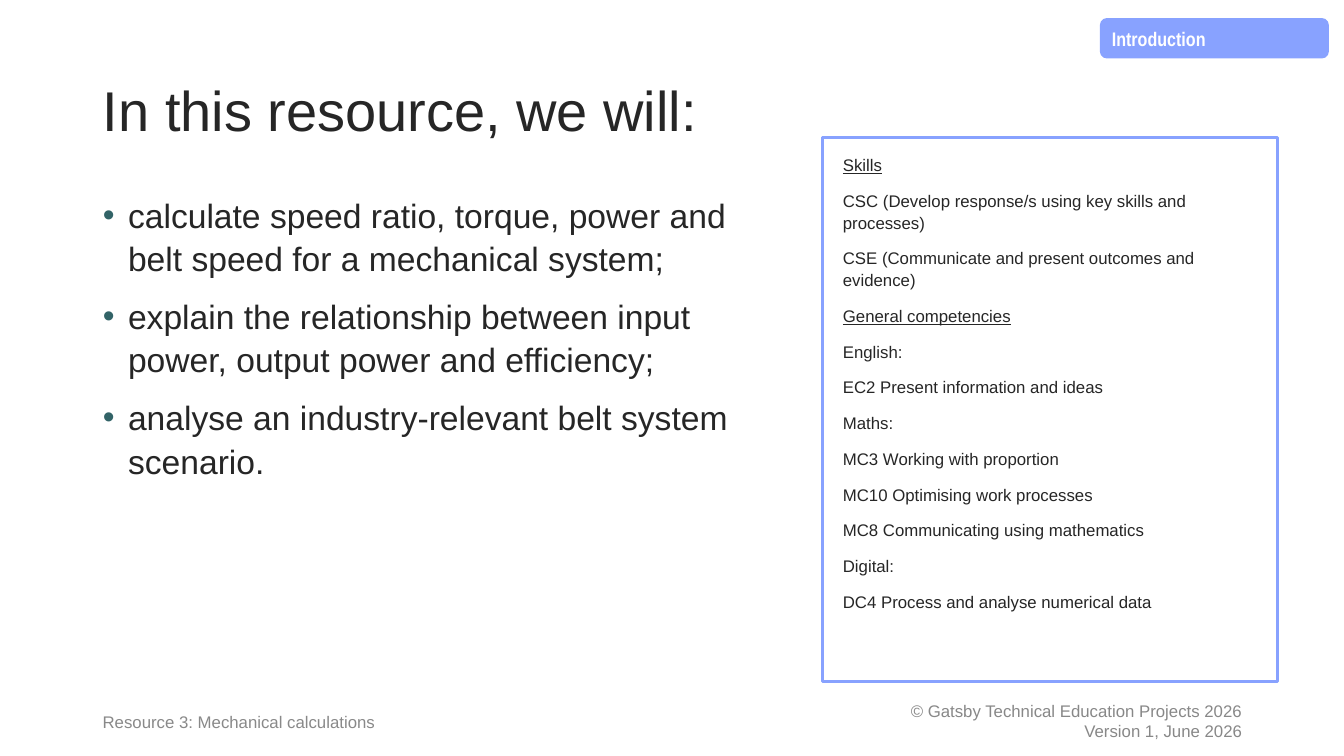
from lxml.etree import SubElement
from pptx import Presentation
from pptx.dml.color import RGBColor
from pptx.enum.shapes import MSO_SHAPE
from pptx.enum.text import MSO_ANCHOR, MSO_AUTO_SIZE, PP_ALIGN
from pptx.oxml.ns import qn
from pptx.util import Inches, Pt

INK, BLUE, TEAL, WHITE = "262626", "88A2FF", "326367", "FFFFFF"

GOALS = [
    "calculate speed ratio, torque, power and belt speed for a mechanical system;",
    "explain the relationship between input power, output power and efficiency;",
    "analyse an industry-relevant belt system scenario.",
]
HEADS = ["Skills", "General competencies"]
SKILLS = [
    HEADS[0],
    "CSC (Develop response/s using key skills and processes)",
    "CSE (Communicate and present outcomes and evidence)",
    HEADS[1],
    "English:",
    "EC2 Present information and ideas",
    "Maths:",
    "MC3 Working with proportion",
    "MC10 Optimising work processes",
    "MC8 Communicating using mathematics",
    "Digital:",
    "DC4 Process and analyse numerical data",
]


def color(hex):
    return RGBColor.from_string(hex)


def place(shape, box):
    for name, value in zip(("left", "top", "width", "height"), box):
        setattr(shape, name, Inches(value))


def paint(shape, fill, line=None):
    shape.fill.solid()
    shape.fill.fore_color.rgb = color(fill)
    if line:
        shape.line.color.rgb = color(line)
        shape.line.width = Pt(2.25)
    else:
        shape.line.fill.background()


def mark(para, bullet):
    """Give the paragraph a hanging teal bullet, or none."""
    props = para._p.get_or_add_pPr()
    hang = Inches(0.25) if bullet else 0
    props.set("marL", str(hang))
    props.set("indent", str(-hang))
    if bullet:
        tint = SubElement(props, qn("a:buClr"))
        SubElement(tint, qn("a:srgbClr"), val=TEAL)
        SubElement(props, qn("a:buFont"), typeface="Arial")
        SubElement(props, qn("a:buChar"), char="•")
    else:
        SubElement(props, qn("a:buNone"))


def write(shape, lines, size, ink=INK, face="Arial", bold=False, align=PP_ALIGN.LEFT,
          anchor=MSO_ANCHOR.TOP, inset=(0.1, 0.05), space=1.08, gap=0, bullet=False):
    frame = shape.text_frame
    side, edge = map(Inches, inset)
    style = {"word_wrap": True, "auto_size": MSO_AUTO_SIZE.NONE, "vertical_anchor": anchor,
             "margin_left": side, "margin_right": side,
             "margin_top": edge, "margin_bottom": edge}
    for name, value in style.items():
        setattr(frame, name, value)
    for i, line in enumerate(lines):
        para = frame.add_paragraph() if i else frame.paragraphs[0]
        mark(para, bullet)
        para.alignment = align
        para.line_spacing = space
        para.space_before = Pt(gap if i else 0)
        run = para.add_run()
        run.text = line
        look = {"name": face, "size": Pt(size), "bold": bold, "underline": line in HEADS}
        for name, value in look.items():
            setattr(run.font, name, value)
        run.font.color.rgb = color(ink)


def add_title(slide, box):
    title = slide.shapes.title
    place(title, box)
    write(title, ["In this resource, we will:"], 40, anchor=MSO_ANCHOR.MIDDLE, space=0.9)


def add_goals(slide, box):
    body = slide.placeholders[1]
    place(body, box)
    write(body, GOALS, 24, gap=10, bullet=True)


def add_skills(slide, box):
    panel = slide.placeholders[2]
    place(panel, box)
    paint(panel, WHITE, BLUE)
    write(panel, SKILLS, 12, inset=(0.2, 0.16), gap=10)


def add_tag(slide, box):
    tag = slide.shapes.add_shape(MSO_SHAPE.FLOWCHART_ALTERNATE_PROCESS, *map(Inches, box))
    tag.shadow.inherit = False
    paint(tag, BLUE)
    write(tag, ["Introduction"], 14, WHITE, "Arial Narrow", bold=True)


def add_footer(slide, box):
    left, top, width, height = box
    note = slide.shapes.add_textbox(*map(Inches, (left, top, 4.6, height)))
    write(note, ["Resource 3: Mechanical calculations"], 12, "898989",
          anchor=MSO_ANCHOR.MIDDLE)
    right = slide.shapes.add_textbox(*map(Inches, (left + width - 4.5, top, 4.5, height)))
    write(right, ["© Gatsby Technical Education Projects 2026", "Version 1, June 2026"], 12,
          "888888", align=PP_ALIGN.RIGHT, anchor=MSO_ANCHOR.MIDDLE, space=1.0)


def main():
    deck = Presentation()
    deck.slide_width, deck.slide_height = Inches(13.33), Inches(7.5)
    slide = deck.slides.add_slide(deck.slide_layouts.get_by_name("Two Content"))
    add_title(slide, (0.92, 0.4, 11.5, 1.45))
    add_goals(slide, (0.92, 1.85, 7, 4.76))
    add_skills(slide, (8.16, 1.36, 4.51, 5.4))
    add_tag(slide, (10.91, 0.18, 2.27, 0.4))
    add_footer(slide, (0.92, 6.95, 11.5, 0.4))
    deck.save("out.pptx")


if __name__ == "__main__":
    main()
